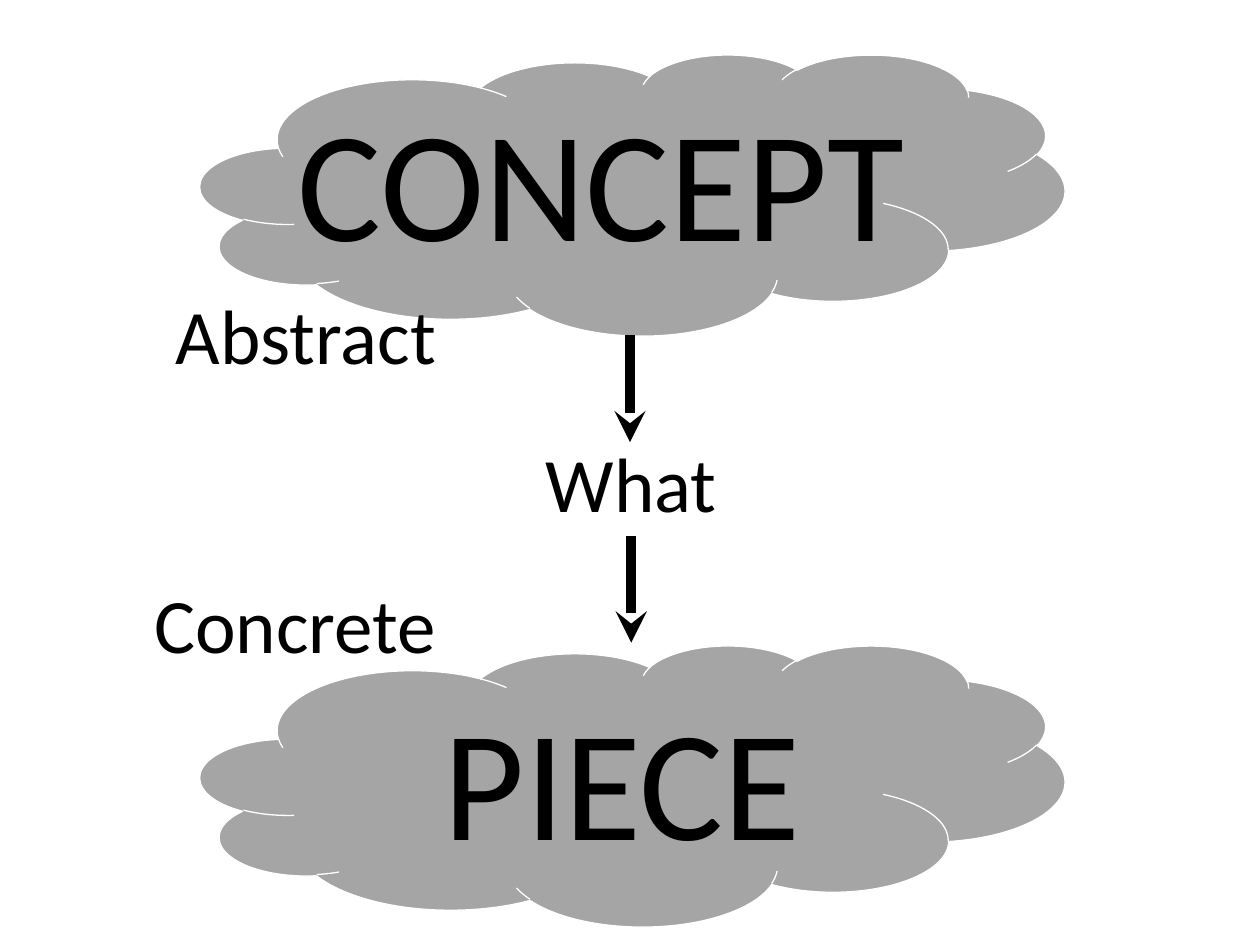
"""Build a slide that leads from an abstract concept to a concrete piece."""
import pptx
import pptx.dml.color
import pptx.enum.shapes
import pptx.enum.text
import pptx.oxml
import pptx.oxml.ns
import pptx.util
from pptx.util import Inches

FONT = "Calibri"
BLACK, GREY, WHITE = "000000", "A5A5A5", "FFFFFF"
ALIGN = pptx.enum.text.PP_ALIGN
CLOUD_SIZE = (6.86, 2.23)
WORD_SIZE = (5.4, 1.62)
LABEL_SIZE = (2.97, 0.84)


def color(value):
    """Turn a hex string into a colour."""
    return pptx.dml.color.RGBColor.from_string(value)


def add_text(page, text, *, at, size, points, align=ALIGN.CENTER, fill=BLACK):
    """Place one line of text in a box and return the box."""
    box = page.shapes.add_textbox(*map(Inches, at + size))
    box.text_frame.word_wrap = True
    para = box.text_frame.paragraphs[0]
    para.alignment = align
    span = para.add_run()
    span.text = text
    span.font.name = FONT
    span.font.size = pptx.util.Pt(points)
    span.font.color.rgb = color(fill)
    return box


def add_cloud(page, text, at, word_at):
    """Draw a grey cloud with a large word over it."""
    cloud = page.shapes.add_shape(
        pptx.enum.shapes.MSO_SHAPE.CLOUD, *map(Inches, at + CLOUD_SIZE))
    cloud.shadow.inherit = False
    cloud.fill.solid()
    cloud.fill.fore_color.rgb = color(GREY)
    cloud.line.color.rgb = color(WHITE)
    cloud.line.width = pptx.util.Pt(0.75)
    add_text(page, text, at=word_at, size=WORD_SIZE, points=90)


def add_arrow(page, x, top, bottom):
    """Draw a thick arrow straight down and return it."""
    arrow = page.shapes.add_connector(
        pptx.enum.shapes.MSO_CONNECTOR.STRAIGHT,
        Inches(x), Inches(top), Inches(x), Inches(bottom))
    arrow.line.color.rgb = color(BLACK)
    arrow.line.width = pptx.util.Pt(6)
    head = pptx.oxml.parse_xml(
        f'<a:tailEnd {pptx.oxml.ns.nsdecls("a")} type="stealth"/>')
    arrow.line._get_or_add_ln().append(head)
    effects = pptx.oxml.parse_xml(
        f'<a:effectLst {pptx.oxml.ns.nsdecls("a")}/>')
    arrow._element.spPr.append(effects)
    return arrow


def add_step(page, text, at, size):
    """Place the middle question with an arrow into it and one out of it."""
    left, top = at
    width, height = size
    bottom = top + height
    add_arrow(page, 5, 2.66, 3.51)
    step = add_text(page, text, at=at, size=size, points=44)
    add_arrow(page, left + width / 2, bottom, bottom + 0.85).begin_connect(step, 2)


def build():
    """Build and save the deck."""
    deck = pptx.Presentation()
    deck.slide_width, deck.slide_height = Inches(10), Inches(7.5)
    page = deck.slides.add_slide(deck.slide_layouts[6])
    add_cloud(page, "CONCEPT", (1.59, 0.43), (2.07, 0.62))
    add_cloud(page, "PIECE", (1.59, 5.12), (2.24, 5.37))
    add_step(page, "What", (4.22, 3.41), (1.58, 0.84))
    for text, top in (("Abstract", 2.23), ("Concrete", 4.53)):
        add_text(page, text, at=(0.59, top), size=LABEL_SIZE, points=44,
                 align=ALIGN.RIGHT)
    deck.save("out.pptx")


if __name__ == "__main__":
    build()
